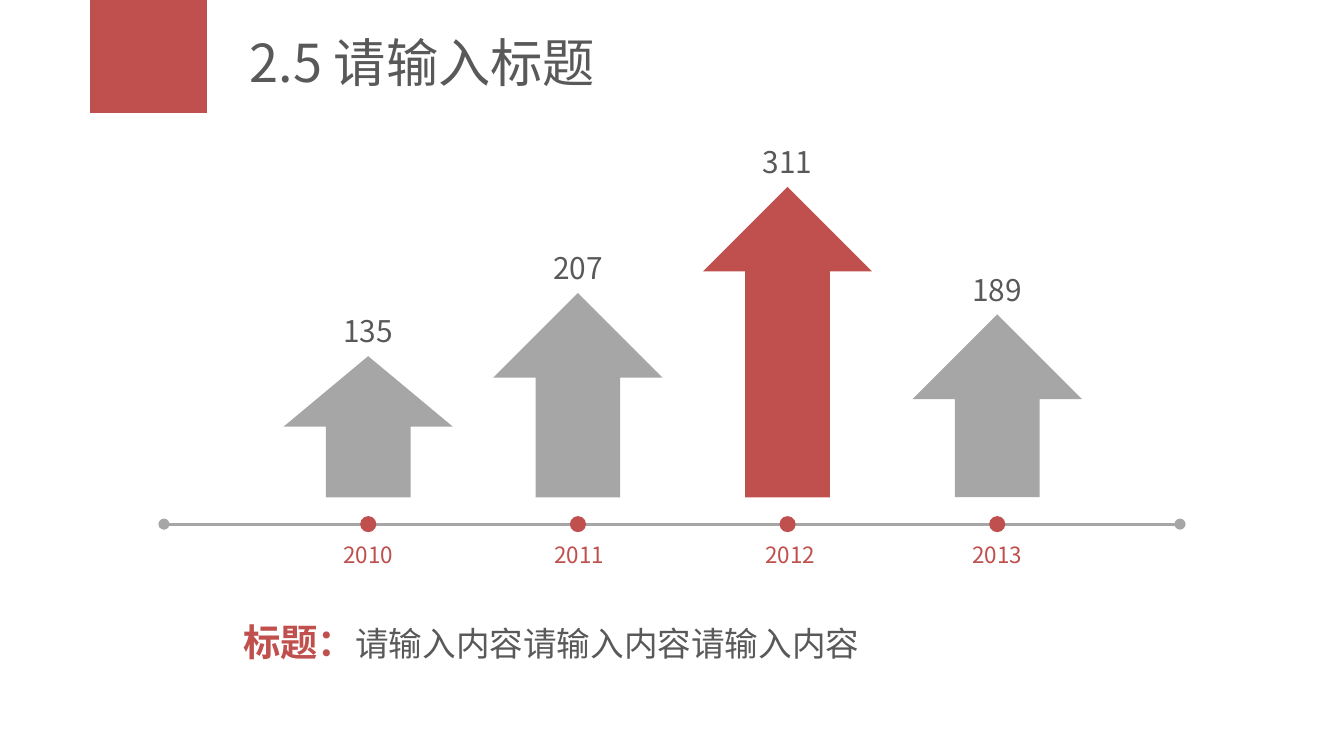
from dataclasses import dataclass

from lxml.etree import SubElement
from pptx import Presentation
from pptx.dml.color import RGBColor
from pptx.enum.shapes import MSO_CONNECTOR as Connector
from pptx.enum.shapes import MSO_SHAPE as Preset
from pptx.enum.text import MSO_ANCHOR as Anchor
from pptx.enum.text import PP_ALIGN as Align
from pptx.oxml.ns import qn
from pptx.util import Inches, Pt

COLORS = {"red": "C0504D", "gray": "A6A6A6", "text": "595959"}
FONT = "Noto Sans CJK SC"
SLIDE_WIDTH = 10
SLIDE_HEIGHT = SLIDE_WIDTH * 9 / 16
FIRST_CENTER, COLUMN_STEP = 2.74, 1.56
ARROW_WIDTH, ARROW_BASE = 1.26, 3.7
AXIS_LEFT, AXIS_RIGHT, AXIS_Y = 1.22, 8.78, 3.9
DOT_SIZE = 0.12
LABEL_HEIGHT = 0.37


@dataclass(frozen=True)
class Area:
    left: float
    top: float
    width: float
    height: float

    def emu(self) -> list[int]:
        return [Inches(v) for v in (self.left, self.top, self.width, self.height)]


@dataclass(frozen=True)
class Span:
    text: str
    size: float
    color: str
    bold: bool = False


@dataclass(frozen=True)
class Milestone:
    year: str
    value: int
    height: float
    color: str = "gray"
    year_shift: float = 0


MILESTONES = [
    Milestone("2010", 135, 1.05),
    Milestone("2011", 207, 1.52, year_shift=0.01),
    Milestone("2012", 311, 2.31, "red", year_shift=0.02),
    Milestone("2013", 189, 1.36),
]


def rgb(color: str) -> RGBColor:
    return RGBColor.from_string(COLORS[color])


def centered(center: float, top: float, width: float, height: float) -> Area:
    return Area(center - width / 2, top, width, height)


def style_font(font, span: Span) -> None:
    font.size = Pt(span.size)
    font.bold = span.bold
    font.color.rgb = rgb(span.color)


def add_text(page, area: Area, spans: list[Span], align=Align.LEFT,
             spacing: float = 1, anchor=Anchor.TOP, wrap: bool = True) -> None:
    frame = page.shapes.add_textbox(*area.emu()).text_frame
    frame.word_wrap = wrap
    frame.vertical_anchor = anchor
    para = frame.paragraphs[0]
    para.alignment = align
    para.line_spacing = spacing
    style_font(para.font, spans[0])
    para.font.name = FONT
    defaults = para._p.pPr.find(qn("a:defRPr"))
    SubElement(defaults, qn("a:ea")).set("typeface", FONT)
    for span in spans:
        run = para.add_run()
        run.text = span.text
        if len(spans) > 1:
            style_font(run.font, span)


def add_block(page, preset: Preset, area: Area, color: str) -> None:
    block = page.shapes.add_shape(preset, *area.emu())
    block.shadow.inherit = False
    block.fill.solid()
    block.fill.fore_color.rgb = rgb(color)
    block.line.fill.background()


def add_axis(page) -> None:
    axis = page.shapes.add_connector(
        Connector.STRAIGHT, Inches(AXIS_LEFT), Inches(AXIS_Y), Inches(AXIS_RIGHT), Inches(AXIS_Y))
    axis.line.color.rgb = rgb("gray")
    axis.line.width = Pt(1.5)
    outline = axis.line._get_or_add_ln()
    for end in ("a:headEnd", "a:tailEnd"):
        SubElement(outline, qn(end)).set("type", "oval")
    SubElement(axis._element.spPr, qn("a:effectLst"))


def add_milestone(page, column: int, item: Milestone) -> None:
    center = FIRST_CENTER + column * COLUMN_STEP
    top = ARROW_BASE - item.height
    add_text(page, centered(center + item.year_shift, AXIS_Y - 0.02, 0.59, LABEL_HEIGHT),
             [Span(item.year, 12, "red")], Align.CENTER, spacing=1.5, wrap=False)
    add_block(page, Preset.OVAL,
              centered(center, AXIS_Y - DOT_SIZE / 2, DOT_SIZE, DOT_SIZE), "red")
    add_block(page, Preset.UP_ARROW,
              centered(center, top, ARROW_WIDTH, item.height), item.color)
    add_text(page, centered(center, top - LABEL_HEIGHT, 0.87, LABEL_HEIGHT),
             [Span(str(item.value), 16, "text")], Align.CENTER)


def main() -> None:
    deck = Presentation()
    deck.slide_width, deck.slide_height = Inches(SLIDE_WIDTH), Inches(SLIDE_HEIGHT)
    page = deck.slides.add_slide(deck.slide_layouts[6])
    add_block(page, Preset.RECTANGLE, Area(0.67, 0, 0.87, 0.84), "red")
    add_text(page, Area(1.76, 0.14, 7.89, 0.63),
             [Span("2.5 请输入标题", 28, "text")], anchor=Anchor.MIDDLE)
    add_axis(page)
    for column, item in enumerate(MILESTONES):
        add_milestone(page, column, item)
    add_text(page, Area(1.71, 4.39, 6.85, 0.55),
             [Span("标题：", 20, "red", bold=True),
              Span("请输入内容请输入内容请输入内容", 18, "text")], spacing=1.5)
    deck.save("out.pptx")


if __name__ == "__main__":
    main()
